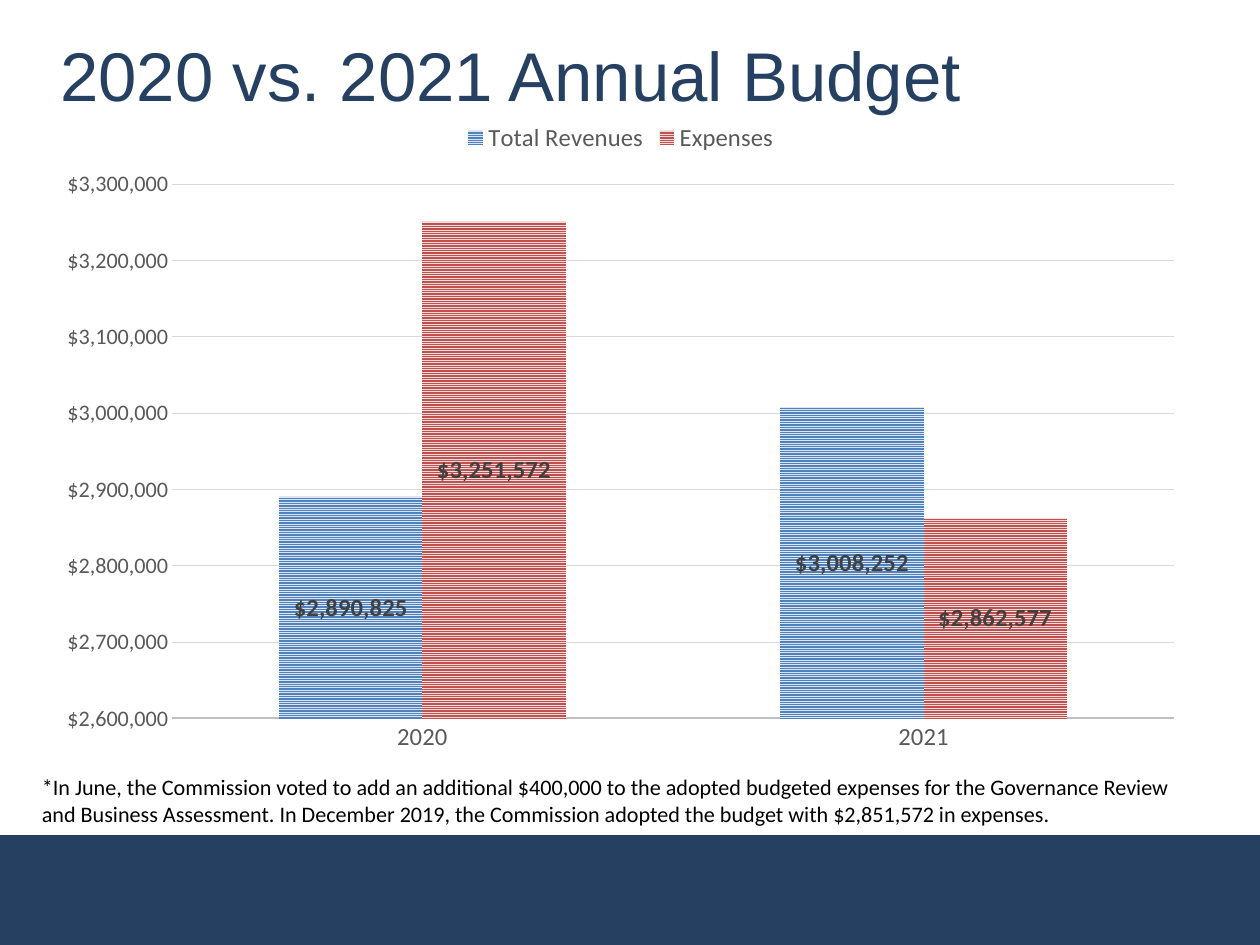
from dataclasses import dataclass
from typing import Any

from pptx import Presentation
from pptx.chart.chart import Chart
from pptx.chart.data import CategoryChartData
from pptx.dml.color import RGBColor
from pptx.enum.chart import (XL_CHART_TYPE, XL_LABEL_POSITION,
                             XL_LEGEND_POSITION, XL_TICK_MARK)
from pptx.enum.dml import MSO_PATTERN
from pptx.enum.shapes import MSO_SHAPE
from pptx.enum.text import MSO_ANCHOR, MSO_AUTO_SIZE, PP_ALIGN
from pptx.util import Cm, Pt


@dataclass(frozen=True)
class Theme:
    navy: str = "254061"
    ink: str = "000000"
    axis_text: str = "595959"
    label_text: str = "404040"
    axis_line: str = "BFBFBF"
    grid_line: str = "D9D9D9"
    heading_font: str = "Arial"
    body_font: str = "Calibri"
    title_size: int = 56
    large_size: int = 20
    body_size: int = 18


@dataclass(frozen=True)
class BudgetSeries:
    name: str
    values: tuple[int, ...]
    stripe: str
    background: str


@dataclass(frozen=True)
class Box:
    left: float
    top: float
    width: float
    height: float

    def lengths(self) -> tuple[Cm, Cm, Cm, Cm]:
        return Cm(self.left), Cm(self.top), Cm(self.width), Cm(self.height)


THEME = Theme()
DOLLARS = '"$"#,##0'
YEARS = ("2020", "2021")
BUDGET = (
    BudgetSeries("Total Revenues", (2890825, 3008252), "4F81BD", "DCE6F2"),
    BudgetSeries("Expenses", (3251572, 2862577), "C0504D", "F2DCDB"),
)
NOTE = ("*In June, the Commission voted to add an additional $400,000 to the "
        "adopted budgeted expenses for the Governance Review and Business "
        "Assessment. In December 2019, the Commission adopted the budget with "
        "$2,851,572 in expenses.")

TITLE_BOX = Box(1.55, 1.07, 32.51, 2.11)
CHART_BOX = Box(1.27, 3.18, 33.05, 18.77)
NOTE_BOX = Box(1.02, 22, 33.05, 1.91)
BAND_BOX = Box(-0.1, 23.95, 36.32, 3.18)


def apply(target: Any, values: dict[str, Any]) -> None:
    for name, value in values.items():
        setattr(target, name, value)


def format_font(font: Any, size: int, color: str,
                name: str = THEME.body_font, bold: bool = False) -> None:
    apply(font, {"name": name, "size": Pt(size), "bold": bold})
    font.color.rgb = RGBColor.from_string(color)


def format_line(line: Any, color: str, width: float) -> None:
    line.color.rgb = RGBColor.from_string(color)
    line.width = Pt(width)


def write_text(shape: Any, text: str, anchor: MSO_ANCHOR, size: int,
               color: str, font_name: str) -> None:
    frame = shape.text_frame
    margins = {f"margin_{side}": Cm(0.18)
               for side in ("left", "top", "right", "bottom")}
    apply(frame, {"word_wrap": True, "auto_size": MSO_AUTO_SIZE.NONE,
                  "vertical_anchor": anchor, "text": text, **margins})
    paragraph = frame.paragraphs[0]
    paragraph.alignment = PP_ALIGN.LEFT
    format_font(paragraph.runs[0].font, size, color, font_name)


def add_band(slide: Any) -> None:
    band = slide.shapes.add_shape(MSO_SHAPE.RECTANGLE, *BAND_BOX.lengths())
    band.shadow.inherit = False
    band.fill.solid()
    band.fill.fore_color.rgb = RGBColor.from_string(THEME.navy)
    band.line.fill.background()


def format_axes(chart: Chart) -> None:
    category_axis, value_axis = chart.category_axis, chart.value_axis
    for axis, size in ((category_axis, THEME.large_size),
                       (value_axis, THEME.body_size)):
        apply(axis, {"major_tick_mark": XL_TICK_MARK.NONE,
                     "minor_tick_mark": XL_TICK_MARK.NONE})
        format_font(axis.tick_labels.font, size, THEME.axis_text)
    format_line(category_axis.format.line, THEME.axis_line, 1.5)

    apply(value_axis, {"minimum_scale": 2600000, "maximum_scale": 3300000,
                       "major_unit": 100000, "has_major_gridlines": True})
    apply(value_axis.tick_labels, {"number_format": DOLLARS,
                                   "number_format_is_linked": False})
    value_axis.format.line.fill.background()
    format_line(value_axis.major_gridlines.format.line, THEME.grid_line, 0.75)


def format_series(series: Any, budget: BudgetSeries) -> None:
    fill = series.format.fill
    fill.patterned()
    fill.pattern = MSO_PATTERN.NARROW_HORIZONTAL
    fill.fore_color.rgb = RGBColor.from_string(budget.stripe)
    fill.back_color.rgb = RGBColor.from_string(budget.background)
    labels = series.data_labels
    apply(labels, {"show_value": True, "position": XL_LABEL_POSITION.CENTER,
                   "number_format": DOLLARS, "number_format_is_linked": False})
    format_font(labels.font, THEME.large_size, THEME.label_text, bold=True)


def add_budget_chart(slide: Any) -> None:
    data = CategoryChartData(number_format=DOLLARS)
    data.categories = YEARS
    for budget in BUDGET:
        data.add_series(budget.name, budget.values)
    chart = slide.shapes.add_chart(XL_CHART_TYPE.COLUMN_CLUSTERED,
                                   *CHART_BOX.lengths(), data).chart
    format_font(chart.font, 10, THEME.ink)
    apply(chart, {"has_title": False, "has_legend": True})
    apply(chart.legend, {"position": XL_LEGEND_POSITION.TOP,
                         "include_in_layout": False})
    format_font(chart.legend.font, THEME.large_size, THEME.axis_text)
    format_axes(chart)

    plot = chart.plots[0]
    apply(plot, {"gap_width": 150, "overlap": 0, "vary_by_categories": False})
    for series, budget in zip(plot.series, BUDGET):
        format_series(series, budget)


def main() -> None:
    presentation = Presentation()
    apply(presentation, {"slide_width": Cm(36.12), "slide_height": Cm(27.1)})
    slide = presentation.slides.add_slide(presentation.slide_layouts[5])

    # Footer band
    add_band(slide)

    # Title
    title = slide.shapes.title
    apply(title, dict(zip(("left", "top", "width", "height"),
                          TITLE_BOX.lengths())))
    write_text(title, "2020 vs. 2021 Annual Budget", MSO_ANCHOR.MIDDLE,
               THEME.title_size, THEME.navy, THEME.heading_font)

    # Footnote
    note = slide.shapes.add_textbox(*NOTE_BOX.lengths())
    write_text(note, NOTE, MSO_ANCHOR.TOP, THEME.body_size, THEME.ink,
               THEME.body_font)

    # Revenue and expense columns
    add_budget_chart(slide)

    presentation.save("out.pptx")


if __name__ == "__main__":
    main()
